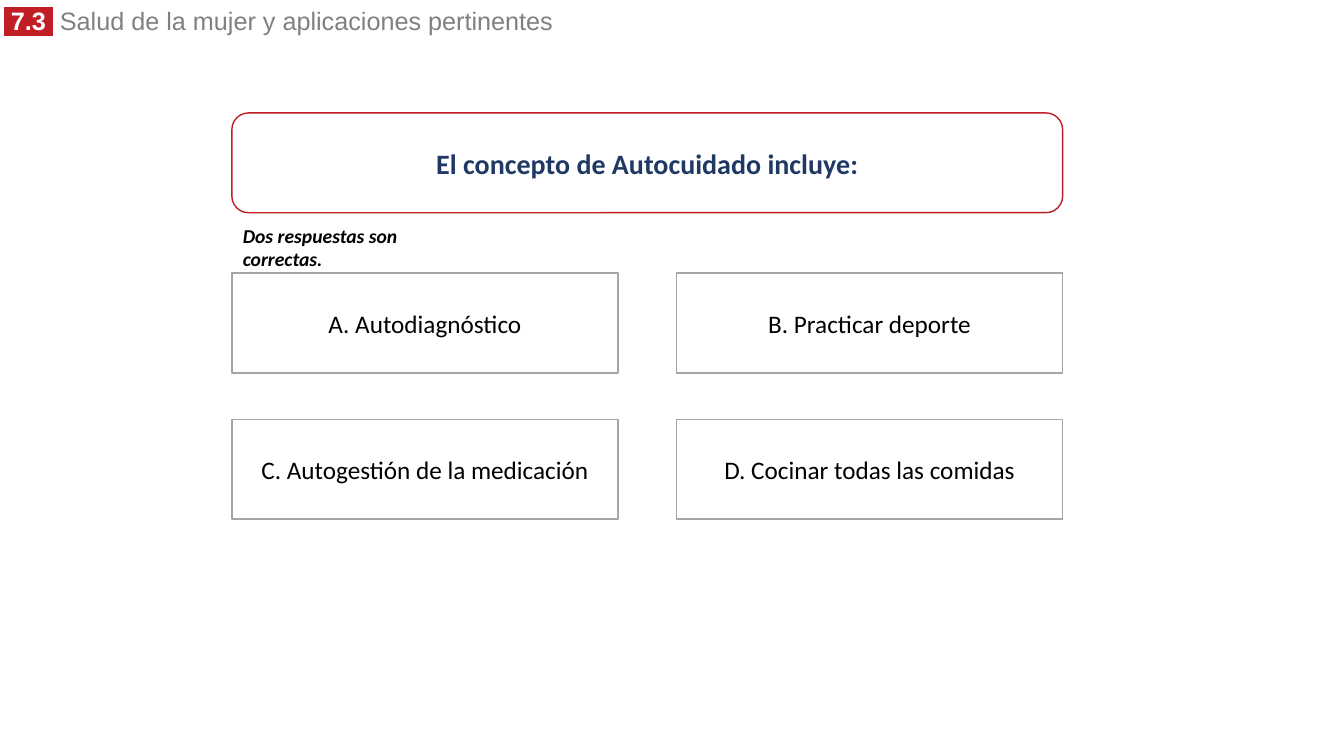
from lxml import etree
from pptx import Presentation
from pptx.dml.color import RGBColor
from pptx.enum.shapes import MSO_SHAPE
from pptx.enum.text import MSO_ANCHOR, PP_ALIGN
from pptx.oxml.ns import qn
from pptx.util import Inches, Pt

RED = RGBColor(0xC0, 0x1E, 0x24)
NAVY = RGBColor(0x20, 0x38, 0x64)
GRAY = RGBColor(0x80, 0x80, 0x80)
BORDER = RGBColor(0xA5, 0xA5, 0xA5)
WHITE = RGBColor(0xFF, 0xFF, 0xFF)
BLACK = RGBColor(0, 0, 0)

# Content
SECTION_NUMBER = " 7.3 "
SECTION_TITLE = " Salud de la mujer y aplicaciones pertinentes"
QUESTION = "El concepto de Autocuidado incluye:"
HINT = "Dos respuestas son correctas."
ANSWERS = [
    ["A. Autodiagnóstico", "B. Practicar deporte"],
    ["C. Autogestión de la medicación", "D. Cocinar todas las comidas"],
]

# Text formats
NUMBER_FORMAT = {"name": "Arial", "size": Pt(18), "bold": True, "color": WHITE}
TITLE_FORMAT = {"name": "Arial", "size": Pt(18), "bold": False, "color": GRAY}
QUESTION_FORMAT = {"name": "Calibri", "size": Pt(20), "bold": True, "color": NAVY}
HINT_FORMAT = {"name": "Calibri", "size": Pt(14), "bold": True, "italic": True, "color": BLACK}
ANSWER_FORMAT = {"name": "Calibri", "size": Pt(18), "color": BLACK}

# Layout in inches
LEFT, QUESTION_TOP, ANSWERS_TOP = 2.3, 1.12, 2.71
ANSWER_WIDTH, BOX_HEIGHT = 3.83, 0.99
COLUMN_STEP, ROW_STEP = 4.41, 1.45
QUESTION_WIDTH = COLUMN_STEP + ANSWER_WIDTH


def add_span(para, text, formats):
    span = para.add_run()
    span.text = text
    for key, value in formats.items():
        if key == "color":
            span.font.color.rgb = value
        else:
            setattr(span.font, key, value)
    return span


def highlight(span, color):
    mark = etree.Element(qn("a:highlight"))
    etree.SubElement(mark, qn("a:srgbClr"), val=str(color))
    span.font.fill  # the highlight must follow the text fill
    span.font._element.find(qn("a:solidFill")).addnext(mark)


def add_text(slide, left, top, width, height):
    box = slide.shapes.add_textbox(Inches(left), Inches(top), Inches(width), Inches(height))
    box.text_frame.word_wrap = True
    return box.text_frame.paragraphs[0]


def add_box(slide, kind, left, top, width, border, text, formats):
    box = slide.shapes.add_shape(kind, Inches(left), Inches(top), Inches(width), Inches(BOX_HEIGHT))
    box.shadow.inherit = False
    box.fill.solid()
    box.fill.fore_color.rgb = WHITE
    box.line.color.rgb = border
    box.line.width = Pt(1)
    box.text_frame.vertical_anchor = MSO_ANCHOR.MIDDLE
    para = box.text_frame.paragraphs[0]
    para.alignment = PP_ALIGN.CENTER
    add_span(para, text, formats)


def main():
    deck = Presentation()
    deck.slide_width, deck.slide_height = Inches(13.33), Inches(7.5)
    slide = deck.slides.add_slide(deck.slide_layouts[6])

    # Section heading
    heading = add_text(slide, -0.06, 0.06, 6.53, 0.34)
    heading.line_spacing = 0.8
    highlight(add_span(heading, SECTION_NUMBER, NUMBER_FORMAT), RED)
    add_span(heading, SECTION_TITLE, TITLE_FORMAT)

    # Question and hint
    add_box(slide, MSO_SHAPE.ROUNDED_RECTANGLE, LEFT, QUESTION_TOP, QUESTION_WIDTH,
            RED, QUESTION, QUESTION_FORMAT)
    add_span(add_text(slide, 2.31, 2.17, 2.24, 0.34), HINT, HINT_FORMAT)

    # Answer grid
    for row, answers in enumerate(ANSWERS):
        for column, answer in enumerate(answers):
            add_box(slide, MSO_SHAPE.RECTANGLE, LEFT + column * COLUMN_STEP,
                    ANSWERS_TOP + row * ROW_STEP, ANSWER_WIDTH, BORDER, answer, ANSWER_FORMAT)

    deck.save("out.pptx")


if __name__ == "__main__":
    main()
